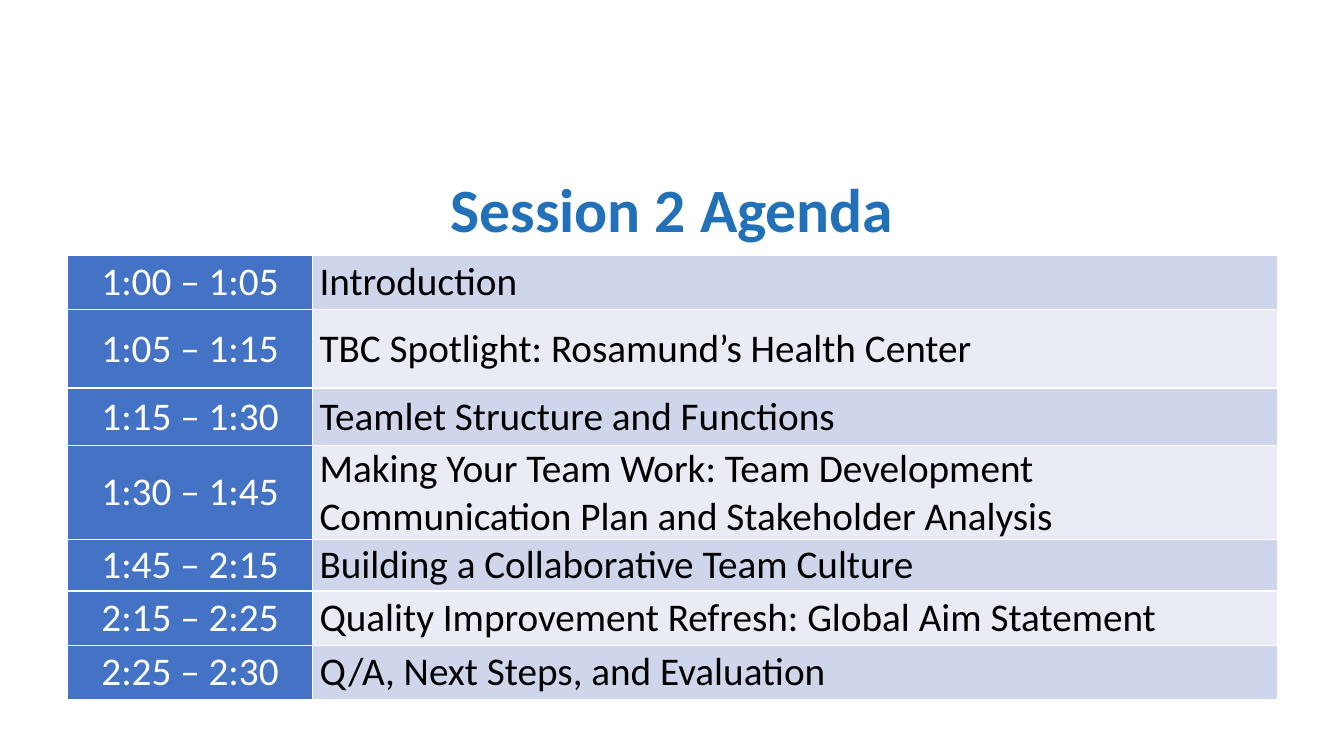
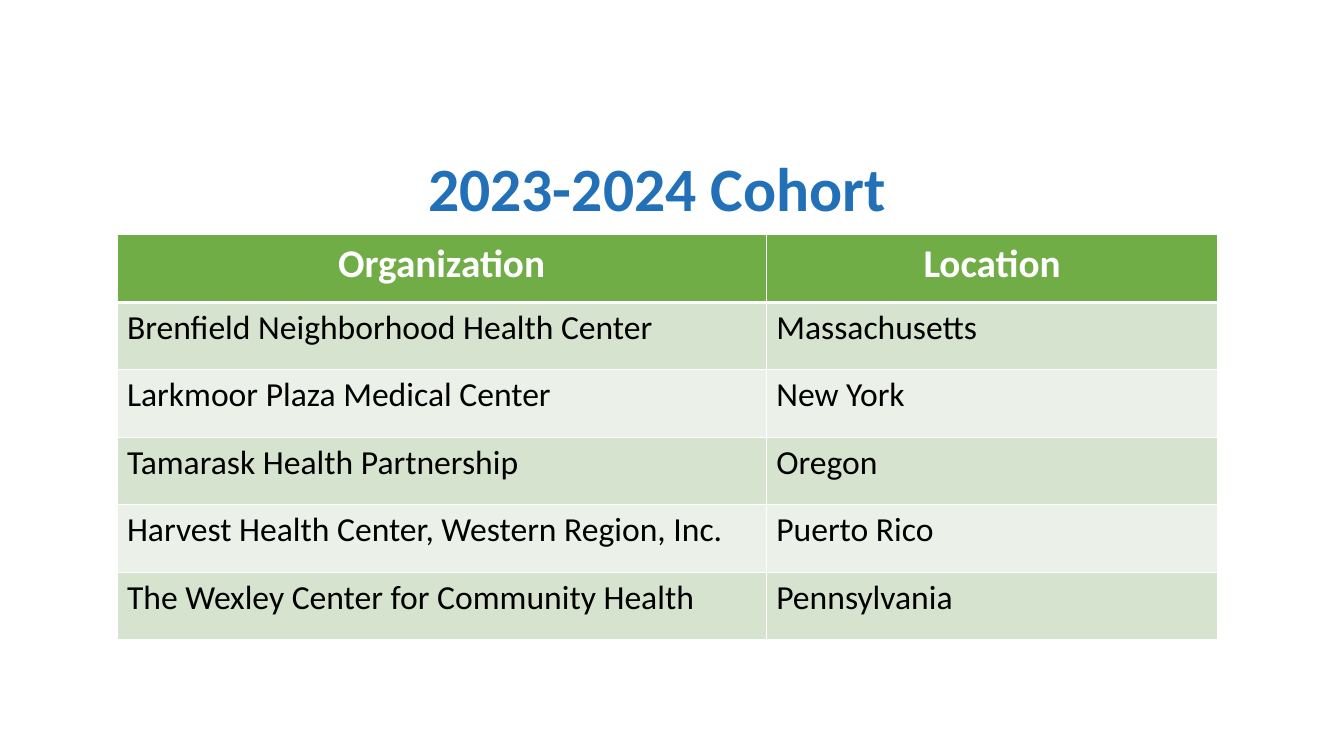
from dataclasses import dataclass

from lxml import etree
from pptx import Presentation
from pptx.dml.color import RGBColor
from pptx.enum import text
from pptx.oxml import ns
from pptx.util import Inches, Pt

FONT = "Calibri"
TITLE_BLUE = RGBColor(0x22, 0x70, 0xB7)
WHITE = RGBColor(0xFF, 0xFF, 0xFF)
BLACK = RGBColor(0x00, 0x00, 0x00)
BLUE = RGBColor(0x44, 0x72, 0xC4)
BLUE_BANDS = (RGBColor(0xCF, 0xD5, 0xEA), RGBColor(0xE9, 0xEB, 0xF5))
GREEN = RGBColor(0x70, 0xAD, 0x47)
GREEN_BANDS = (RGBColor(0xD5, 0xE3, 0xCF), RGBColor(0xEB, 0xF1, 0xE9))


@dataclass(frozen=True)
class CellStyle:
    fill: RGBColor
    color: RGBColor = BLACK
    size: int = 28
    bold: bool = False
    centered: bool = False
    bottom_border: int = 1


@dataclass(frozen=True)
class TableLayout:
    left: float
    top: float
    columns: tuple[float, ...]
    rows: tuple[float, ...]
    side_margin: float = 0.1
    end_margin: float = 0.05
    anchor: text.MSO_ANCHOR = text.MSO_ANCHOR.TOP


AGENDA = (
    ("1:00 – 1:05", "Introduction"),
    ("1:05 – 1:15", "TBC Spotlight: Rosamund’s Health Center"),
    ("1:15 – 1:30", "Teamlet Structure and Functions"),
    ("1:30 – 1:45", "Making Your Team Work: Team Development "
                    "Communication Plan and Stakeholder Analysis"),
    ("1:45 – 2:15", "Building a Collaborative Team Culture"),
    ("2:15 – 2:25", "Quality Improvement Refresh: Global Aim Statement"),
    ("2:25 – 2:30", "Q/A, Next Steps, and Evaluation"),
)
AGENDA_LAYOUT = TableLayout(
    0.67, 2.53, (2.43, 9.57), (0.54, 0.78, 0.57, 0.84, 0.51, 0.54, 0.54),
    side_margin=0.07, end_margin=0, anchor=text.MSO_ANCHOR.MIDDLE,
)

COHORT = (
    ("Organization", "Location"),
    ("Brenfield Neighborhood Health Center", "Massachusetts"),
    ("Larkmoor Plaza Medical Center", "New York"),
    ("Tamarask Health Partnership", "Oregon"),
    ("Harvest Health Center, Western Region, Inc.", "Puerto Rico"),
    ("The Wexley Center for Community Health", "Pennsylvania"),
)
COHORT_LAYOUT = TableLayout(1.16, 2.33, (6.44, 4.48), (0.67,) * len(COHORT))


def agenda_style(row: int, column: int) -> CellStyle:
    """Blue time column beside banded topics."""
    if column == 0:
        return CellStyle(BLUE, WHITE, centered=True)
    return CellStyle(BLUE_BANDS[row % 2])


def cohort_style(row: int, column: int) -> CellStyle:
    """Green header row above banded entries."""
    if row == 0:
        return CellStyle(GREEN, WHITE, bold=True, centered=True, bottom_border=3)
    return CellStyle(GREEN_BANDS[(row - 1) % 2], size=24)


def format_paragraph(paragraph, size, color, bold, centered) -> None:
    if centered:
        paragraph.alignment = text.PP_ALIGN.CENTER
    for run in paragraph.runs:
        run.font.name = FONT
        run.font.size = Pt(size)
        run.font.bold = bold
        run.font.color.rgb = color


def add_title(slide, title: str, left: float, top: float) -> None:
    box = slide.shapes.add_textbox(Inches(left), Inches(top), Inches(11.5), Inches(0.83))
    frame = box.text_frame
    frame.word_wrap = True
    frame.vertical_anchor = text.MSO_ANCHOR.MIDDLE
    frame.text = title
    paragraph = frame.paragraphs[0]
    paragraph.line_spacing = 0.9
    format_paragraph(paragraph, 44, TITLE_BLUE, True, True)


def add_border(cell, side: str, width: int) -> None:
    properties = cell._tc.get_or_add_tcPr()
    line = etree.SubElement(properties, ns.qn(f"a:ln{side}"), w=str(Pt(width)))
    fill = etree.SubElement(line, ns.qn("a:solidFill"))
    etree.SubElement(fill, ns.qn("a:srgbClr"), val=str(WHITE))


def format_cell(cell, content: str, style: CellStyle, layout: TableLayout,
                top_border: int) -> None:
    cell.text_frame.text = content
    cell.vertical_anchor = layout.anchor
    cell.margin_left = cell.margin_right = Inches(layout.side_margin)
    cell.margin_top = cell.margin_bottom = Inches(layout.end_margin)
    widths = {"L": 1, "R": 1, "T": top_border, "B": style.bottom_border}
    for side, width in widths.items():
        add_border(cell, side, width)
    cell.fill.solid()
    cell.fill.fore_color.rgb = style.fill
    format_paragraph(cell.text_frame.paragraphs[0], style.size, style.color,
                     style.bold, style.centered)


def add_styled_table(slide, entries, layout: TableLayout, style_for) -> None:
    table = slide.shapes.add_table(
        len(layout.rows), len(layout.columns), Inches(layout.left), Inches(layout.top),
        Inches(sum(layout.columns)), Inches(sum(layout.rows)),
    ).table
    table.first_row = table.horz_banding = False
    for column, width in zip(table.columns, layout.columns):
        column.width = Inches(width)
    for row, height in zip(table.rows, layout.rows):
        row.height = Inches(height)
    for i, entry in enumerate(entries):
        for j, content in enumerate(entry):
            # Neighbouring cells share the border between them
            top_border = style_for(i - 1, j).bottom_border if i else 1
            format_cell(table.cell(i, j), content, style_for(i, j), layout, top_border)


def main() -> None:
    presentation = Presentation()
    presentation.slide_width = Inches(13.33)
    presentation.slide_height = Inches(7.5)
    blank = presentation.slide_layouts[6]

    # Agenda
    slide = presentation.slides.add_slide(blank)
    add_title(slide, "Session 2 Agenda", 0.92, 1.69)
    add_styled_table(slide, AGENDA, AGENDA_LAYOUT, agenda_style)

    # Cohort
    slide = presentation.slides.add_slide(blank)
    add_title(slide, "2023-2024 Cohort", 0.77, 1.49)
    add_styled_table(slide, COHORT, COHORT_LAYOUT, cohort_style)

    presentation.save("out.pptx")


if __name__ == "__main__":
    main()
